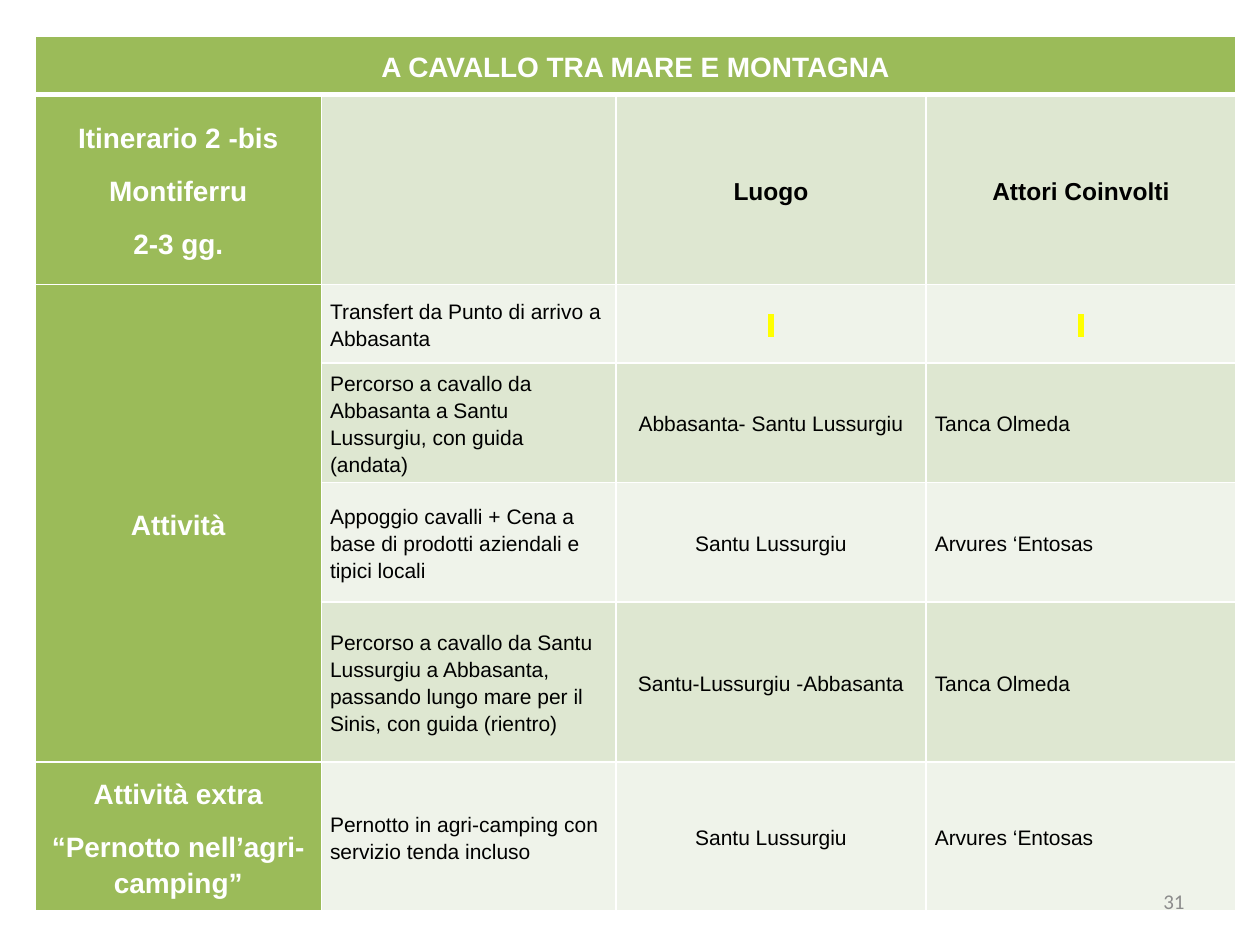
from dataclasses import dataclass

from lxml import etree
from pptx import Presentation
from pptx.dml.color import RGBColor
from pptx.enum.text import MSO_ANCHOR, PP_ALIGN
from pptx.oxml.ns import qn
from pptx.util import Inches, Pt

LEFT, CENTER, RIGHT = PP_ALIGN.LEFT, PP_ALIGN.CENTER, PP_ALIGN.RIGHT
MIDDLE = MSO_ANCHOR.MIDDLE

WIDTH, HEIGHT = 10, 7.5
COLUMNS = (2.27, 2.34, 2.46, 2.46)
ROWS = (0.46, 1.51, 0.62, 0.95, 0.95, 1.27, 1.18)
GREEN, WHITE, BLACK, GREY, YELLOW = "9BBB59", "FFFFFF", "000000", "8C8C8C", "FFFF00"
BANDS = ("EFF3EA", "DEE7D1")
HORSE_FARM, GUEST_FARM = "Tanca Olmeda", "Arvures ‘Entosas"


@dataclass(frozen=True)
class Heading:
    row: int
    column: int
    lines: tuple[str, ...]
    size: int = 16
    color: str = WHITE
    last_row: int = 0
    last_column: int = 0


@dataclass(frozen=True)
class Activity:
    row: int
    description: str
    place: str = ""
    actor: str = ""


HEADINGS = (
    Heading(0, 0, ("A CAVALLO TRA MARE E MONTAGNA",), last_column=3),
    Heading(1, 0, ("Itinerario 2 -bis", "Montiferru", "2-3 gg.")),
    Heading(1, 2, ("Luogo",), size=14, color=BLACK),
    Heading(1, 3, ("Attori Coinvolti",), size=14, color=BLACK),
    Heading(2, 0, ("Attività",), last_row=5),
    Heading(6, 0, ("Attività extra", "“Pernotto nell’agri-camping”")),
)
ACTIVITIES = (
    Activity(2, "Transfert da Punto di arrivo a Abbasanta"),
    Activity(3, "Percorso a cavallo da Abbasanta a Santu Lussurgiu, con guida (andata)",
             "Abbasanta- Santu Lussurgiu", HORSE_FARM),
    Activity(4, "Appoggio cavalli + Cena a base di prodotti aziendali e tipici locali",
             "Santu Lussurgiu", GUEST_FARM),
    Activity(5, "Percorso a cavallo da Santu Lussurgiu a Abbasanta, passando lungo mare "
                "per il Sinis, con guida (rientro)",
             "Santu-Lussurgiu -Abbasanta", HORSE_FARM),
    Activity(6, "Pernotto in agri-camping con servizio tenda incluso",
             "Santu Lussurgiu", GUEST_FARM),
)


def rgb(color: str) -> RGBColor:
    return RGBColor.from_string(color)


def write(frame, *lines: str, size: int = 12, color: str = BLACK, bold: bool = False,
          align=LEFT, font: str = "Arial", line_spacing: float = 1.15,
          space_after: int = 10, highlight: str = "") -> None:
    for index, line in enumerate(lines):
        para = frame.add_paragraph() if index else frame.paragraphs[0]
        para.alignment = align
        para.line_spacing = line_spacing
        para.space_after = Pt(space_after)
        span = para.add_run()
        span.text = line
        span.font.size = Pt(size)
        span.font.bold = bold
        span.font.name = font
        span.font.color.rgb = rgb(color)
        if highlight:
            mark = etree.Element(qn("a:highlight"))
            etree.SubElement(mark, qn("a:srgbClr"), val=highlight)
            span.font.fill._xPr.find(qn("a:latin")).addprevious(mark)


def set_borders(cell, **widths: int) -> None:
    properties = cell._tc.get_or_add_tcPr()
    for side in ("L", "R", "T", "B"):
        line = etree.SubElement(properties, qn(f"a:ln{side}"), w=str(Pt(widths.get(side, 1))))
        fill = etree.SubElement(line, qn("a:solidFill"))
        etree.SubElement(fill, qn("a:srgbClr"), val=WHITE)


def style_cell(cell, row: int, column: int) -> None:
    set_borders(cell, T=3 if row == 1 else 1, B=3 if row == 0 else 1)
    cell.fill.solid()
    cell.fill.fore_color.rgb = rgb(GREEN if row == 0 or column == 0 else BANDS[row % 2])
    cell.vertical_anchor = MIDDLE
    cell.margin_left = cell.margin_right = Inches(0.07)
    cell.margin_top = cell.margin_bottom = 0


def draw_heading(table, heading: Heading) -> None:
    cell = table.cell(heading.row, heading.column)
    if heading.last_row or heading.last_column:
        cell.merge(table.cell(max(heading.row, heading.last_row),
                              max(heading.column, heading.last_column)))
    write(cell.text_frame, *heading.lines, size=heading.size, color=heading.color,
          bold=True, align=CENTER)


def draw_activity(table, activity: Activity) -> None:
    write(table.cell(activity.row, 1).text_frame, activity.description)
    for column, text in ((2, activity.place), (3, activity.actor)):
        write(table.cell(activity.row, column).text_frame, text or " ",
              align=CENTER if column == 2 or not text else LEFT,
              highlight="" if text else YELLOW)


def draw_table(page) -> None:
    table = page.shapes.add_table(
        len(ROWS), len(COLUMNS), Inches(0.28), Inches(0.29),
        Inches(sum(COLUMNS)), Inches(sum(ROWS))).table
    for column, width in enumerate(COLUMNS):
        table.columns[column].width = Inches(width)
    for row, height in enumerate(ROWS):
        table.rows[row].height = Inches(height)
        for column in range(len(COLUMNS)):
            style_cell(table.cell(row, column), row, column)
    for heading in HEADINGS:
        draw_heading(table, heading)
    for activity in ACTIVITIES:
        draw_activity(table, activity)


def draw_page_number(page) -> None:
    box = page.shapes.add_textbox(Inches(7.17), Inches(6.95), Inches(2.33), Inches(0.4))
    frame = box.text_frame
    frame.word_wrap = True
    frame.vertical_anchor = MIDDLE
    write(frame, "31", color=GREY, font="Calibri", align=RIGHT, line_spacing=1.0, space_after=0)


def main() -> None:
    deck = Presentation()
    deck.slide_width, deck.slide_height = Inches(WIDTH), Inches(HEIGHT)
    page = deck.slides.add_slide(deck.slide_layouts[6])
    draw_table(page)
    draw_page_number(page)
    deck.save("out.pptx")


if __name__ == "__main__":
    main()
